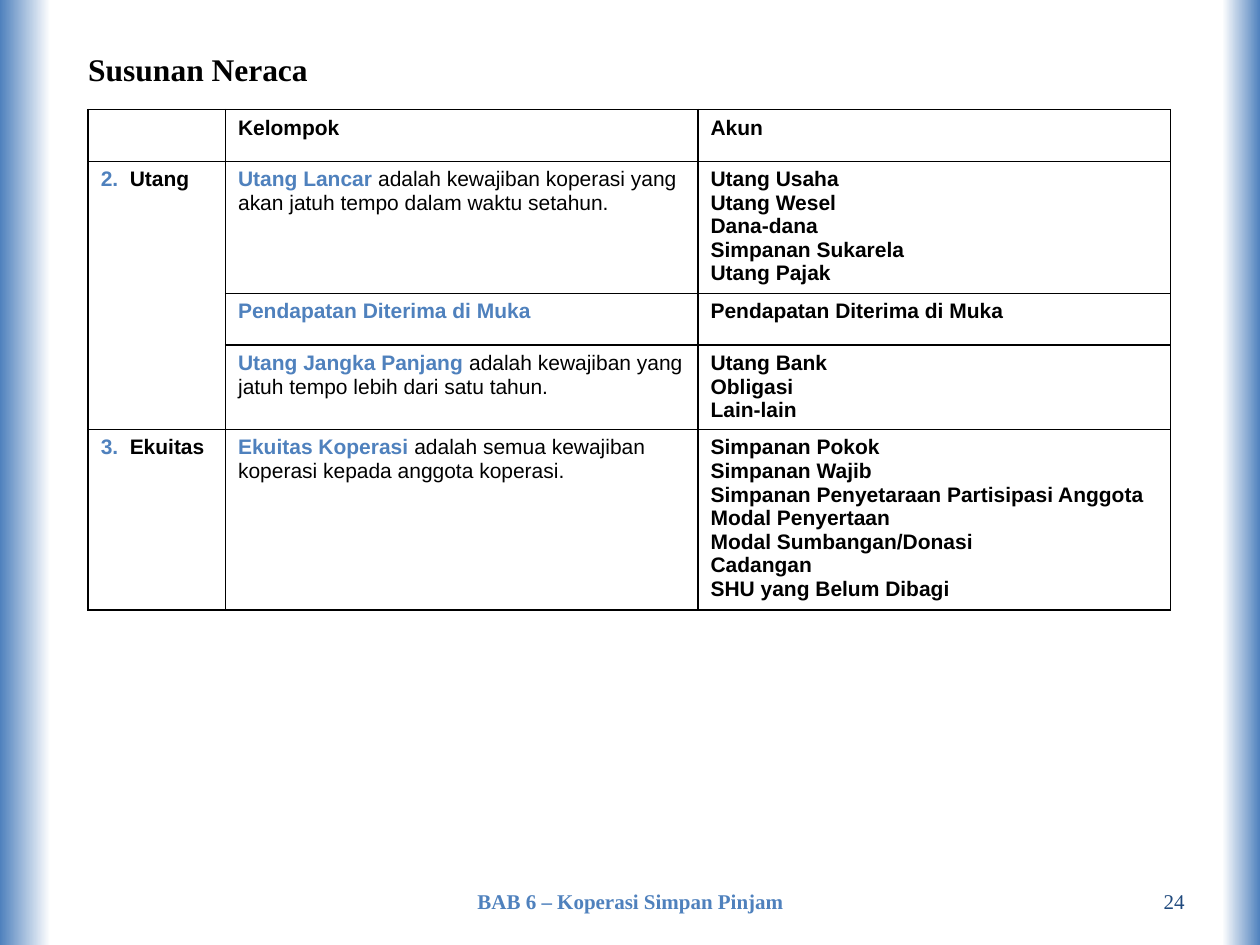
"""Build the balance sheet structure slide: liabilities and equity."""
from lxml.etree import SubElement
from pptx import Presentation
from pptx.dml.color import RGBColor
from pptx.enum.text import MSO_ANCHOR, PP_ALIGN
from pptx.oxml.ns import qn
from pptx.util import Inches, Pt

TITLE = "Susunan Neraca"
CHAPTER = "BAB 6 – Koperasi Simpan Pinjam"
PAGE = "24"
HEADINGS = ["", "Kelompok", "Akun"]
SECTIONS = [
    ("2.", "Utang", [
        ("Utang Lancar", "adalah kewajiban koperasi yang akan jatuh tempo dalam waktu setahun.",
         ["Utang Usaha", "Utang Wesel", "Dana-dana", "Simpanan Sukarela", "Utang Pajak"]),
        ("Pendapatan Diterima di Muka", "", ["Pendapatan Diterima di Muka"]),
        ("Utang Jangka Panjang", "adalah kewajiban yang jatuh tempo lebih dari satu tahun.",
         ["Utang Bank", "Obligasi", "Lain-lain"]),
    ]),
    ("3.", "Ekuitas", [
        ("Ekuitas Koperasi", "adalah semua kewajiban koperasi kepada anggota koperasi.",
         ["Simpanan Pokok", "Simpanan Wajib", "Simpanan Penyetaraan Partisipasi Anggota",
          "Modal Penyertaan", "Modal Sumbangan/Donasi", "Cadangan", "SHU yang Belum Dibagi"]),
    ]),
]
THEME = {
    "accent": "4F81BD", "ink": "000000", "page": "1F497D", "paper": "FFFFFF",
    "serif": "Times New Roman", "sans": "Arial", "title": 18, "text": 12, "border": 1,
}
BACKGROUND = [(0, "accent"), (4, "paper"), (97, "paper"), (100, "accent")]
COLUMNS = [1.09, 3.75, 3.75]
TABLE_LEFT, TABLE_TOP = 0.7, 0.87
MIN_ROW, LINE, CELL_MARGIN = 0.41, 0.19, 0.05
NUMBER_INDENT = 0.23


def style_font(font, face, size, color, bold):
    values = {"name": THEME[face], "size": Pt(THEME[size]), "bold": bold}
    for key, value in values.items():
        setattr(font, key, value)
    font.color.rgb = RGBColor.from_string(THEME[color])


def write_runs(paragraph, runs, face="sans", size="text"):
    style_font(paragraph.font, face, size, "ink", False)
    for text, color, bold in runs:
        run = paragraph.add_run()
        run.text = text
        style_font(run.font, face, size, color, bold)


def fill_cell(cell, paragraphs):
    frame = cell.text_frame
    for index, runs in enumerate(paragraphs):
        paragraph = frame.add_paragraph() if index else frame.paragraphs[0]
        write_runs(paragraph, runs)


def outline_cell(cell):
    properties = cell._tc.get_or_add_tcPr()
    for side in ("lnL", "lnR", "lnT", "lnB"):
        line = SubElement(properties, qn(f"a:{side}"), w=str(Pt(THEME["border"])))
        solid = SubElement(line, qn("a:solidFill"))
        SubElement(solid, qn("a:srgbClr"), val=THEME["ink"])
    cell.fill.background()


def paint_background(slide):
    fill = slide.background.fill
    fill.gradient()
    fill.gradient_angle = 0
    stops = next(slide.element.iter(qn("a:gsLst")))
    for stop in list(stops):
        stops.remove(stop)
    for percent, color in BACKGROUND:
        stop = SubElement(stops, qn("a:gs"), pos=str(percent * 1000))
        SubElement(stop, qn("a:srgbClr"), val=THEME[color])


def add_title(slide):
    title = slide.shapes.title
    place = {"left": 0.6, "top": 0.35, "width": 8.9, "height": 0.45}
    for key, value in place.items():
        setattr(title, key, Inches(value))
    title.text_frame.vertical_anchor = MSO_ANCHOR.TOP
    paragraph = title.text_frame.paragraphs[0]
    paragraph.alignment = PP_ALIGN.LEFT
    write_runs(paragraph, [(TITLE, "ink", True)], "serif", "title")


def add_footer(slide, text, left, width, align, color, bold):
    box = slide.shapes.add_textbox(Inches(left), Inches(6.95), Inches(width), Inches(0.4))
    frame = box.text_frame
    frame.word_wrap = True
    frame.vertical_anchor = MSO_ANCHOR.MIDDLE
    frame.paragraphs[0].alignment = align
    write_runs(frame.paragraphs[0], [(text, color, bold)], "serif")


def add_balance_table(slide):
    groups = [group for _, _, members in SECTIONS for group in members]
    heights = [MIN_ROW] + [
        max(MIN_ROW, LINE * len(accounts) + 2 * CELL_MARGIN) for _, _, accounts in groups]
    table = slide.shapes.add_table(
        len(heights), len(COLUMNS), Inches(TABLE_LEFT), Inches(TABLE_TOP),
        Inches(sum(COLUMNS)), Inches(sum(heights))).table
    table.first_row = table.horz_banding = False
    for column, width in zip(table.columns, COLUMNS):
        column.width = Inches(width)
    for row, height in zip(table.rows, heights):
        row.height = Inches(height)
    for cell in table.iter_cells():
        outline_cell(cell)

    for column, heading in enumerate(HEADINGS):
        fill_cell(table.cell(0, column), [[(heading, "ink", True)] if heading else []])
    row = 1
    for number, section, members in SECTIONS:
        label = table.cell(row, 0)
        if len(members) > 1:
            label.merge(table.cell(row + len(members) - 1, 0))
        fill_cell(label, [[(f"{number}\t", "accent", True), (section, "ink", True)]])
        hanging = label.text_frame.paragraphs[0]._p.get_or_add_pPr()
        hanging.set("marL", str(Inches(NUMBER_INDENT)))
        hanging.set("indent", str(-Inches(NUMBER_INDENT)))
        for group, meaning, accounts in members:
            runs = [(group, "accent", True)]
            if meaning:
                runs.append((f" {meaning}", "ink", False))
            fill_cell(table.cell(row, 1), [runs])
            fill_cell(table.cell(row, 2), [[(account, "ink", True)] for account in accounts])
            row += 1


def main():
    deck = Presentation()
    deck.slide_width, deck.slide_height = Inches(10), Inches(7.5)
    slide = deck.slides.add_slide(deck.slide_layouts[5])
    paint_background(slide)
    add_title(slide)
    add_balance_table(slide)
    add_footer(slide, CHAPTER, 3.42, 3.17, PP_ALIGN.CENTER, "accent", True)
    add_footer(slide, PAGE, 7.17, 2.33, PP_ALIGN.RIGHT, "page", False)
    deck.save("out.pptx")


if __name__ == "__main__":
    main()
